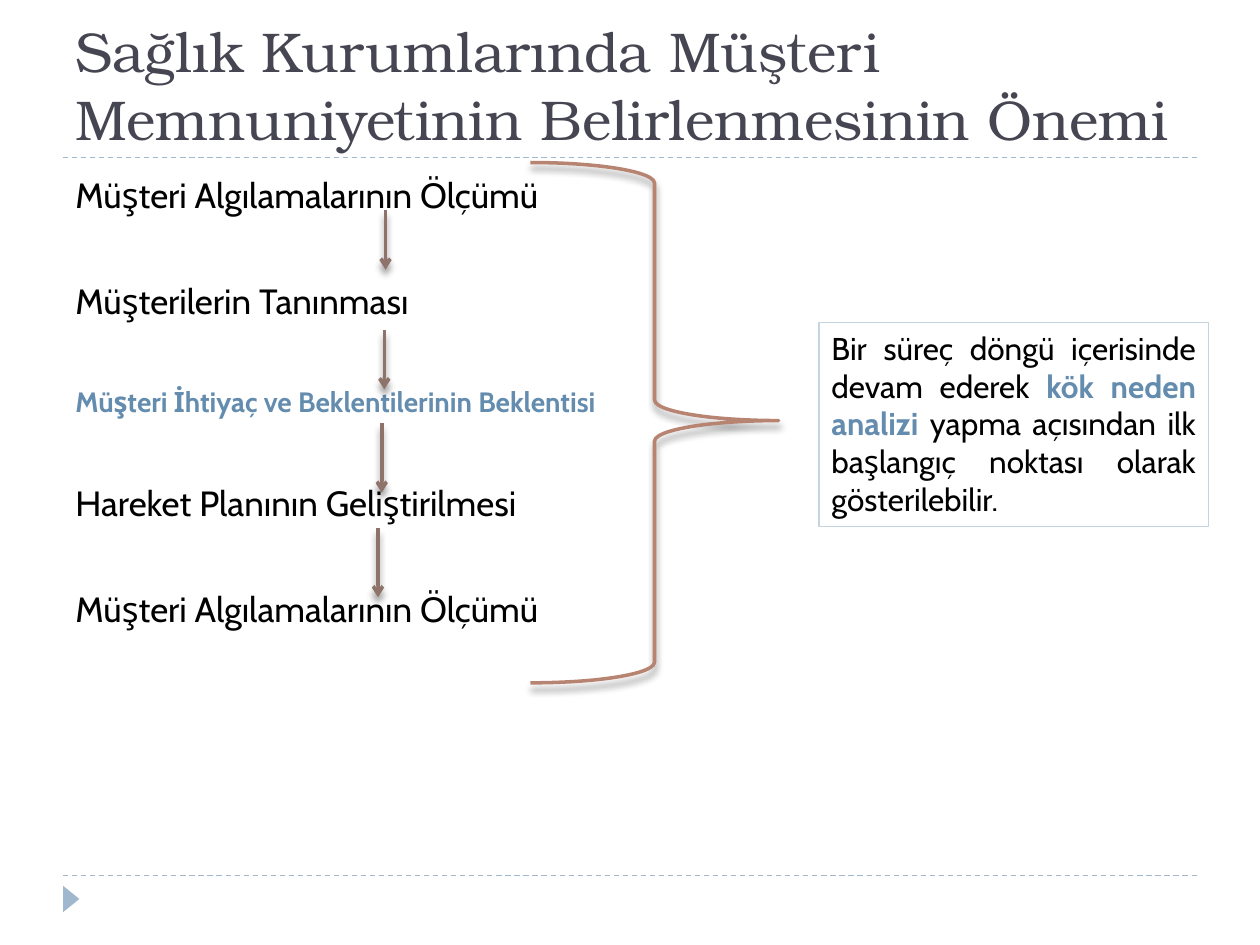
"""Build the slide on why customer satisfaction in health care is measured."""
import pptx
import pptx.dml.color
import pptx.enum.dml
import pptx.enum.shapes
import pptx.enum.text
import pptx.oxml
import pptx.oxml.ns
import pptx.util

Inches = pptx.util.Inches
Pt = pptx.util.Pt
Shape = pptx.enum.shapes.MSO_SHAPE
Align = pptx.enum.text.PP_ALIGN
Anchor = pptx.enum.text.MSO_ANCHOR
hue = pptx.dml.color.RGBColor.from_string
theme = {
    "title": "464653", "text": "000000", "accent": "638CAE", "rule": "9FB8CD",
    "arrow": "8E736A", "brace": "B88472", "frame": "C5D4E1",
    "serif": "TeX Gyre Bonum", "sans": "Cabin",
    "head": 32, "step": 20, "note": 18, "small": 16,
}


def write(para, text, size="step", color="text", font="sans", bold=False):
    """Add a formatted run to a paragraph."""
    run = para.add_run()
    run.text = text
    run.font.size = Pt(theme[size])
    run.font.name = theme[font]
    run.font.bold = bold
    run.font.color.rgb = hue(theme[color])


def stroke(item, color, width, shade=False):
    """Set the line of an item and its shadow, if any."""
    item.line.color.rgb = hue(theme[color])
    item.line.width = Pt(width)
    drop = (
        '<a:outerShdw blurRad="50800" dist="43180" dir="5400000" rotWithShape="0">'
        '<a:srgbClr val="000000"><a:alpha val="40000"/></a:srgbClr></a:outerShdw>'
    ) if shade else ""
    space = pptx.oxml.ns.nsdecls("a")
    props = item._element.spPr
    props.append(pptx.oxml.parse_xml(f"<a:effectLst {space}>{drop}</a:effectLst>"))


deck = pptx.Presentation()
deck.slide_width, deck.slide_height = Inches(10), Inches(7.5)
slide = deck.slides.add_slide(deck.slide_layouts[6])
shapes = slide.shapes
straight = pptx.enum.shapes.MSO_CONNECTOR.STRAIGHT

for y in (6.95, 1.25):
    rule = shapes.add_connector(straight, Inches(0.5), Inches(y), Inches(9.5), Inches(y))
    stroke(rule, "rule", 0.75)
    rule.line.dash_style = pptx.enum.dml.MSO_LINE.DASH

mark = shapes.add_shape(
    Shape.ISOSCELES_TRIANGLE, Inches(0.46), Inches(7.07), Inches(0.21), Inches(0.13))
mark.rotation = 90
mark.shadow.inherit = False
mark.fill.solid()
mark.fill.fore_color.rgb = hue(theme["rule"])
mark.line.fill.background()

title = shapes.add_textbox(Inches(0.5), Inches(0.17), Inches(9), Inches(1.08)).text_frame
title.word_wrap = True
title.vertical_anchor = Anchor.BOTTOM
write(title.paragraphs[0], "Sağlık Kurumlarında Müşteri Memnuniyetinin Belirlenmesinin Önemi",
      size="head", color="title", font="serif")

body = shapes.add_textbox(Inches(0.5), Inches(1.33), Inches(9), Inches(5.4)).text_frame
body.word_wrap = True
key = {"size": "small", "color": "accent", "bold": True}
steps = [
    ("Müşteri Algılamalarının Ölçümü", {}),
    ("Müşterilerin Tanınması", {}),
    ("Müşteri İhtiyaç ve Beklentilerinin Beklentisi", key),
    ("Hareket Planının Geliştirilmesi", {}),
    ("Müşteri Algılamalarının Ölçümü", {}),
]
for i, (text, style) in enumerate(steps):
    para = body.paragraphs[0] if i == 0 else body.add_paragraph()
    para.space_before = Pt(36.3 if i else 6)
    write(para, text, **style)

for x, top, end in ((3.06, 1.67, 2.14), (3.05, 2.62, 3.09), (3.03, 3.36, 3.91), (3, 4.19, 4.74)):
    arrow = shapes.add_connector(straight, Inches(x), Inches(top), Inches(x), Inches(end))
    stroke(arrow, "arrow", 2, shade=True)
    tail = pptx.oxml.parse_xml(f'<a:tailEnd {pptx.oxml.ns.nsdecls("a")} type="arrow"/>')
    arrow.line._get_or_add_ln().append(tail)

brace = shapes.add_shape(
    Shape.RIGHT_BRACE, Inches(4.21), Inches(1.29), Inches(1.97), Inches(4.13))
brace.adjustments[0], brace.adjustments[1] = 0.083, 0.496
brace.fill.background()
stroke(brace, "brace", 2, shade=True)

box = shapes.add_shape(Shape.RECTANGLE, Inches(6.5), Inches(2.56), Inches(3.09), Inches(1.62))
box.fill.background()
stroke(box, "frame", 0.75)
note = box.text_frame
note.word_wrap = True
note.vertical_anchor = Anchor.TOP
para = note.paragraphs[0]
para.alignment = Align.JUSTIFY
write(para, "Bir süreç döngü içerisinde devam ederek ", size="note")
write(para, "kök neden analizi", size="note", color="accent", bold=True)
write(para, " yapma açısından ilk başlangıç noktası olarak gösterilebilir.", size="note")

deck.save("out.pptx")
